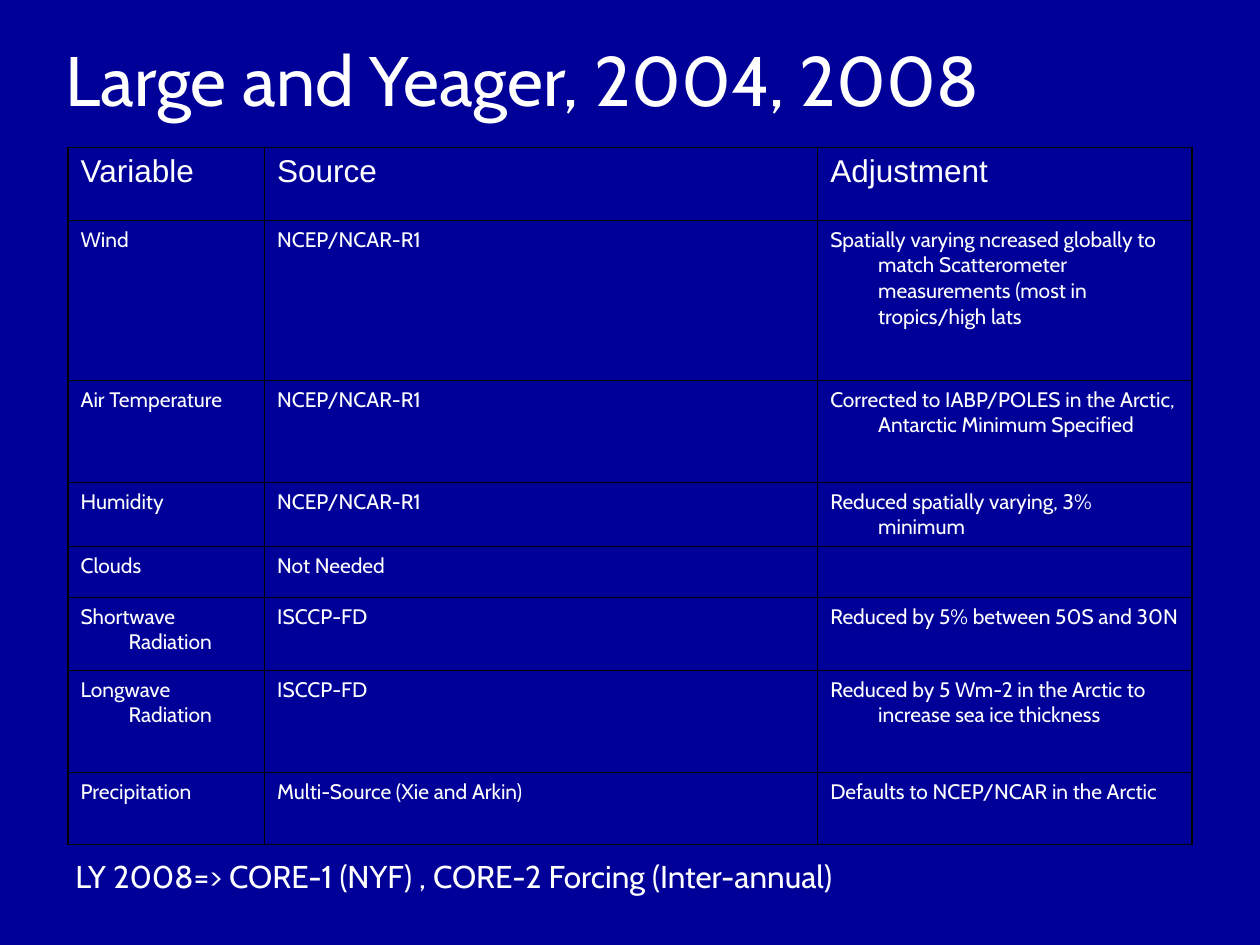
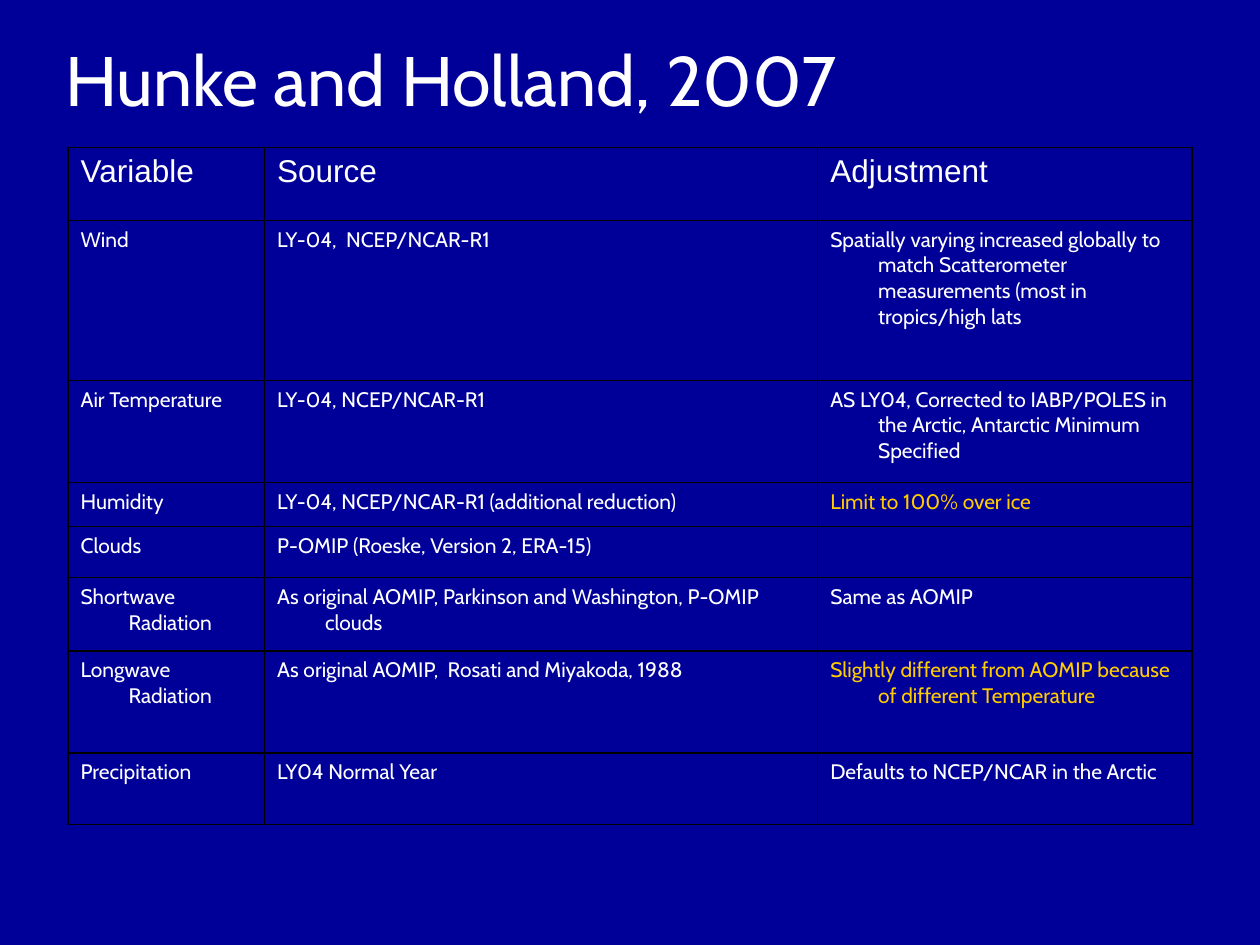
import dataclasses
import typing

import lxml.etree
import pptx
import pptx.dml.color
import pptx.enum.text
import pptx.oxml.ns
import pptx.presentation
import pptx.slide
import pptx.table
import pptx.text.text
import pptx.util

Inches = pptx.util.Inches
Pt = pptx.util.Pt
RGBColor = pptx.dml.color.RGBColor


@dataclasses.dataclass(frozen=True)
class Theme:
    background: RGBColor = RGBColor(0x00, 0x00, 0x99)
    text: RGBColor = RGBColor(0xFF, 0xFF, 0xFF)
    highlight: RGBColor = RGBColor(0xFF, 0xCC, 0x00)
    border: RGBColor = RGBColor(0x00, 0x00, 0x00)
    body_font: str = "Cabin"
    header_font: str = "Arial"
    title_size: int = 40
    header_size: int = 18
    note_size: int = 18
    cell_size: int = 12
    border_width: int = 1


@dataclasses.dataclass(frozen=True)
class ForcingRow:
    variable: str
    source: str
    adjustment: str = ""
    highlighted: bool = False


@dataclasses.dataclass(frozen=True)
class ForcingSlide:
    title: str
    rows: tuple[ForcingRow, ...]
    note: str = ""


THEME = Theme()
HEADINGS = ("Variable", "Source", "Adjustment")
COLUMN_WIDTHS = (1.56, 4.39, 2.97)
ROW_HEIGHTS = (0.58, 1.27, 0.81, 0.35, 0.35, 0.58, 0.81, 0.57)
HANGING_INDENT = Inches(0.38)

FORCING_SLIDES = (
    ForcingSlide(
        "Large and Yeager, 2004, 2008",
        (
            ForcingRow("Wind", "NCEP/NCAR-R1",
                       "Spatially varying ncreased globally to match Scatterometer "
                       "measurements (most in tropics/high lats"),
            ForcingRow("Air Temperature", "NCEP/NCAR-R1",
                       "Corrected to IABP/POLES in the Arctic, Antarctic Minimum Specified"),
            ForcingRow("Humidity", "NCEP/NCAR-R1", "Reduced spatially varying, 3% minimum"),
            ForcingRow("Clouds", "Not Needed"),
            ForcingRow("Shortwave Radiation", "ISCCP-FD", "Reduced by 5% between 50S and 30N"),
            ForcingRow("Longwave\vRadiation", "ISCCP-FD",
                       "Reduced by 5 Wm-2 in the Arctic to increase sea ice thickness"),
            ForcingRow("Precipitation", "Multi-Source (Xie and Arkin)",
                       "Defaults to NCEP/NCAR in the Arctic"),
        ),
        "LY 2008=> CORE-1 (NYF) , CORE-2 Forcing (Inter-annual)",
    ),
    ForcingSlide(
        "Hunke and Holland, 2007",
        (
            ForcingRow("Wind", "LY-04,  NCEP/NCAR-R1",
                       "Spatially varying increased globally to match Scatterometer "
                       "measurements (most in tropics/high lats"),
            ForcingRow("Air Temperature", "LY-04, NCEP/NCAR-R1",
                       "AS LY04, Corrected to IABP/POLES in the Arctic, "
                       "Antarctic Minimum Specified"),
            ForcingRow("Humidity", "LY-04, NCEP/NCAR-R1 (additional reduction)",
                       "Limit to 100% over ice", highlighted=True),
            ForcingRow("Clouds", "P-OMIP (Roeske, Version 2, ERA-15)"),
            ForcingRow("Shortwave Radiation",
                       "As original AOMIP, Parkinson and Washington, P-OMIP clouds",
                       "Same as AOMIP"),
            ForcingRow("Longwave\vRadiation", "As original AOMIP,  Rosati and Miyakoda, 1988",
                       "Slightly different from AOMIP because of different Temperature",
                       highlighted=True),
            ForcingRow("Precipitation", "LY04 Normal Year",
                       "Defaults to NCEP/NCAR in the Arctic"),
        ),
    ),
)


def write_text(text_frame: pptx.text.text.TextFrame, text: str, size: int,
               font_name: str = THEME.body_font, color: RGBColor = THEME.text) -> None:
    text_frame.text = text
    paragraph = text_frame.paragraphs[0]
    paragraph.alignment = pptx.enum.text.PP_ALIGN.LEFT
    for run in paragraph.runs:
        run.font.size = Pt(size)
        run.font.name = font_name
        run.font.bold = False
        run.font.color.rgb = color


def add_title(slide: pptx.slide.Slide, text: str) -> None:
    title = slide.shapes.title
    title.left, title.top = Inches(0.42), Inches(0.33)
    title.width, title.height = Inches(8.75), Inches(0.58)
    title.text_frame.auto_size = pptx.enum.text.MSO_AUTO_SIZE.NONE
    title.text_frame.vertical_anchor = pptx.enum.text.MSO_ANCHOR.MIDDLE
    write_text(title.text_frame, text, THEME.title_size)


def add_note(slide: pptx.slide.Slide, text: str) -> None:
    note = slide.shapes.add_textbox(Inches(0.5), Inches(6.75), Inches(8.75), Inches(0.4))
    note.text_frame.word_wrap = True
    note.text_frame.auto_size = pptx.enum.text.MSO_AUTO_SIZE.SHAPE_TO_FIT_TEXT
    write_text(note.text_frame, text, THEME.note_size)


def format_cell(cell: pptx.table._Cell) -> None:
    qualify = pptx.oxml.ns.qn
    properties = cell._tc.get_or_add_tcPr()
    for side in ("a:lnL", "a:lnR", "a:lnT", "a:lnB"):
        line = lxml.etree.SubElement(properties, qualify(side), w=str(Pt(THEME.border_width)))
        fill = lxml.etree.SubElement(line, qualify("a:solidFill"))
        lxml.etree.SubElement(fill, qualify("a:srgbClr"), val=str(THEME.border))
    cell.fill.background()
    paragraph_properties = cell.text_frame.paragraphs[0]._p.get_or_add_pPr()
    paragraph_properties.set("marL", str(HANGING_INDENT))
    paragraph_properties.set("indent", str(-HANGING_INDENT))


def add_forcing_table(slide: pptx.slide.Slide, rows: typing.Sequence[ForcingRow]) -> None:
    table = slide.shapes.add_table(
        len(ROW_HEIGHTS), len(COLUMN_WIDTHS), Inches(0.54), Inches(1.17),
        Inches(sum(COLUMN_WIDTHS)), Inches(sum(ROW_HEIGHTS))).table
    table.first_row = False
    table.horz_banding = False
    for column, width in zip(table.columns, COLUMN_WIDTHS):
        column.width = Inches(width)
    for table_row, height in zip(table.rows, ROW_HEIGHTS):
        table_row.height = Inches(height)
    for column_index, heading in enumerate(HEADINGS):
        write_text(table.cell(0, column_index).text_frame, heading,
                   THEME.header_size, THEME.header_font)
    for row_index, row in enumerate(rows, start=1):
        adjustment_color = THEME.highlight if row.highlighted else THEME.text
        contents = ((row.variable, THEME.text), (row.source, THEME.text),
                    (row.adjustment, adjustment_color))
        for column_index, (text, color) in enumerate(contents):
            write_text(table.cell(row_index, column_index).text_frame, text,
                       THEME.cell_size, color=color)
    for cell in table.iter_cells():
        format_cell(cell)


def add_forcing_slide(presentation: pptx.presentation.Presentation,
                      content: ForcingSlide) -> None:
    slide = presentation.slides.add_slide(presentation.slide_layouts.get_by_name("Title Only"))
    add_forcing_table(slide, content.rows)
    add_title(slide, content.title)
    if content.note:
        add_note(slide, content.note)


def main() -> None:
    presentation = pptx.Presentation()
    presentation.slide_width = Inches(10)
    presentation.slide_height = Inches(7.5)
    background = presentation.slide_master.background.fill
    background.solid()
    background.fore_color.rgb = THEME.background
    for content in FORCING_SLIDES:
        add_forcing_slide(presentation, content)
    presentation.save("out.pptx")


if __name__ == "__main__":
    main()
